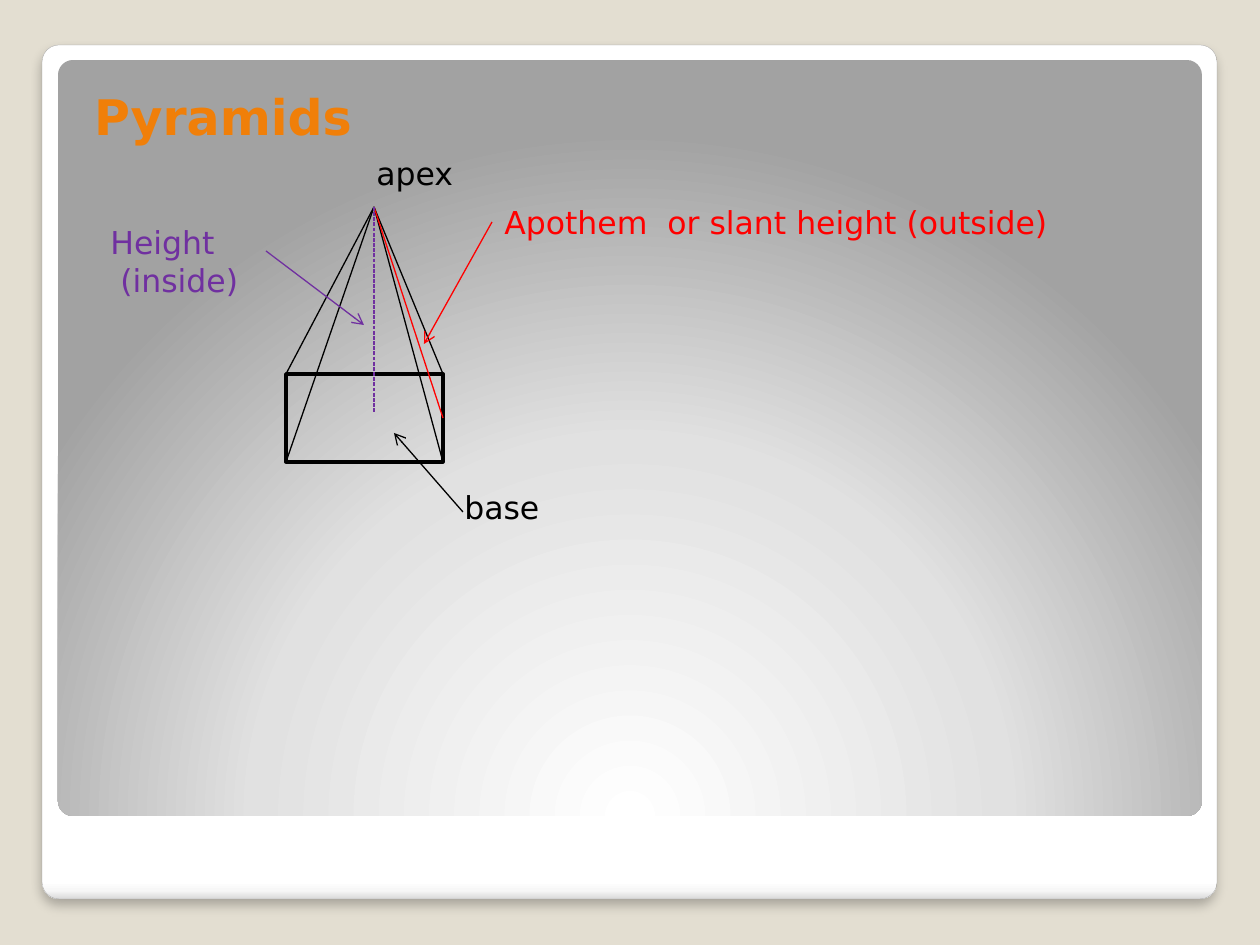
from dataclasses import dataclass

from lxml.etree import SubElement
from pptx import Presentation
from pptx.dml.color import RGBColor
from pptx.enum.dml import MSO_LINE
from pptx.enum.shapes import MSO_CONNECTOR, MSO_SHAPE
from pptx.enum.text import MSO_ANCHOR, PP_ALIGN
from pptx.oxml import parse_xml
from pptx.oxml.ns import nsdecls, qn
from pptx.util import Emu, Pt

EMU_PER_PX = 914400 / 126


def px(length):
    return Emu(round(length * EMU_PER_PX))


@dataclass(frozen=True)
class Theme:
    font: str = "DejaVu Sans"
    title_size: int = 28
    label_size: int = 18
    thin: float = 0.75
    thick: float = 2
    backdrop: str = "E3DED1"
    frame_edge: str = "A4A4A4"
    title: str = "F07F09"
    ink: str = "000000"
    slant: str = "FF0000"
    height: str = "7030A0"
    frame_stops: tuple = ((0, "FFFFFF"), (98, "FFFFFF"), (99, "F7F7F7"), (100, "DADADA"))
    panel_stops: tuple = ((0, "FFFFFF"), (55, "E1E1E1"), (100, "A2A2A2"))


LINEAR_DOWN = '<a:lin ang="5400000" scaled="0"/>'
RADIAL_FROM_BOTTOM = (
    '<a:path path="circle">'
    '<a:fillToRect l="50000" t="175000" r="50000" b="-75000"/></a:path>'
)
SOFT_SHADOW = (
    f'<a:effectLst {nsdecls("a")}>'
    '<a:outerShdw blurRad="76200" dist="50800" dir="5400000" algn="tl" rotWithShape="0">'
    '<a:srgbClr val="000000"><a:alpha val="25000"/></a:srgbClr>'
    "</a:outerShdw></a:effectLst>"
)


class SlideBuilder:
    def __init__(self, page, theme):
        self.page = page
        self.theme = theme

    def background(self):
        fill = self.page.background.fill
        fill.solid()
        fill.fore_color.rgb = RGBColor.from_string(self.theme.backdrop)

    def stroke(self, line, color, width):
        line.color.rgb = RGBColor.from_string(color)
        line.width = Pt(width)

    def panel(self, left, top, width, height, stops, direction, edge=None):
        """Rounded card with a gradient; a card with an edge also casts a shadow."""
        card = self.page.shapes.add_shape(
            MSO_SHAPE.ROUNDED_RECTANGLE, px(left), px(top), px(width), px(height))
        card.adjustments[0] = 0.02
        card.shadow.inherit = False
        stop_xml = "".join(
            f'<a:gs pos="{place * 1000}"><a:srgbClr val="{color}"/></a:gs>'
            for place, color in stops)
        properties = card.element.spPr
        properties.find(qn("a:prstGeom")).addnext(parse_xml(
            f'<a:gradFill {nsdecls("a")} rotWithShape="1">'
            f"<a:gsLst>{stop_xml}</a:gsLst>{direction}</a:gradFill>"))
        if edge:
            self.stroke(card.line, edge, 0.16)
            effects = properties.find(qn("a:effectLst"))
            properties.replace(effects, parse_xml(SOFT_SHADOW))
        else:
            card.line.fill.background()

    def outline(self, left, top, width, height):
        box = self.page.shapes.add_shape(
            MSO_SHAPE.RECTANGLE, px(left), px(top), px(width), px(height))
        box.shadow.inherit = False
        box.fill.background()
        self.stroke(box.line, self.theme.ink, self.theme.thick)

    def line(self, start, end, color, dash=None, arrow=False):
        line = self.page.shapes.add_connector(
            MSO_CONNECTOR.STRAIGHT, *map(px, start + end))
        self.stroke(line.line, color, self.theme.thin)
        if dash:
            line.line.dash_style = dash
        if arrow:
            SubElement(line.line._get_or_add_ln(), qn("a:tailEnd"), type="arrow")
        SubElement(line.element.spPr, qn("a:effectLst"))

    def style(self, para, color, size, bold=False):
        para.font.name = self.theme.font
        para.font.size = Pt(size)
        para.font.bold = bold
        para.font.color.rgb = RGBColor.from_string(color)
        para.alignment = PP_ALIGN.LEFT

    def title(self, text, left, top, width, height):
        box = self.page.shapes.title
        box.left, box.top, box.width, box.height = map(px, (left, top, width, height))
        box.element.getparent().append(box.element)  # in front of the panels
        frame = box.text_frame
        frame.text = text
        frame.vertical_anchor = MSO_ANCHOR.TOP
        frame.margin_left, frame.margin_top = px(25), px(13)
        para = frame.paragraphs[0]
        para.space_before = Pt(2.5)
        self.style(para, self.theme.title, self.theme.title_size, bold=True)

    def label(self, text, left, top, width, height, color, hanging=0):
        box = self.page.shapes.add_textbox(px(left), px(top), px(width), px(height))
        frame = box.text_frame
        frame.word_wrap = True
        frame.text = text
        for para in frame.paragraphs:
            self.style(para, color, self.theme.label_size)
        if hanging:
            frame.paragraphs[-1]._p.get_or_add_pPr().set("marL", str(px(hanging)))


def main():
    theme = Theme()
    deck = Presentation()
    deck.slide_width, deck.slide_height = px(1260), px(945)
    page = deck.slides.add_slide(deck.slide_layouts[5])
    slide = SlideBuilder(page, theme)

    # Backdrop, white frame and shaded panel
    slide.background()
    slide.panel(42, 45, 1175, 854, theme.frame_stops, LINEAR_DOWN, theme.frame_edge)
    slide.panel(58, 60, 1144, 756, theme.panel_stops, RADIAL_FROM_BOTTOM)
    slide.title("Pyramids", 69, 73, 1144, 80)

    # Pyramid: base, edges, slant height and height
    left, top, width, height = 286, 374, 157, 88
    right, bottom = left + width, top + height
    apex = (374, 207)
    slide.outline(left, top, width, height)
    for corner in ((left, top), (left, bottom), (right, bottom), (right, top)):
        slide.line(apex, corner, theme.ink)
    slide.line(apex, (right, top + height // 2), theme.slant)
    slide.line(apex, (apex[0], 413), theme.height, dash=MSO_LINE.SQUARE_DOT)

    # Arrows from the labels
    slide.line((266, 251), (364, 325), theme.height, arrow=True)
    slide.line((492, 222), (424, 344), theme.slant, arrow=True)
    slide.line((463, 512), (394, 433), theme.ink, arrow=True)

    # Labels
    slide.label("Apothem  or slant height (outside)", 492, 197, 640, 50, theme.slant)
    slide.label("Height\n(inside)", 98, 217, 276, 89, theme.height, hanging=10)
    slide.label("base", 452, 482, 237, 50, theme.ink)
    slide.label("apex", 364, 148, 237, 50, theme.ink)

    deck.save("out.pptx")


if __name__ == "__main__":
    main()
